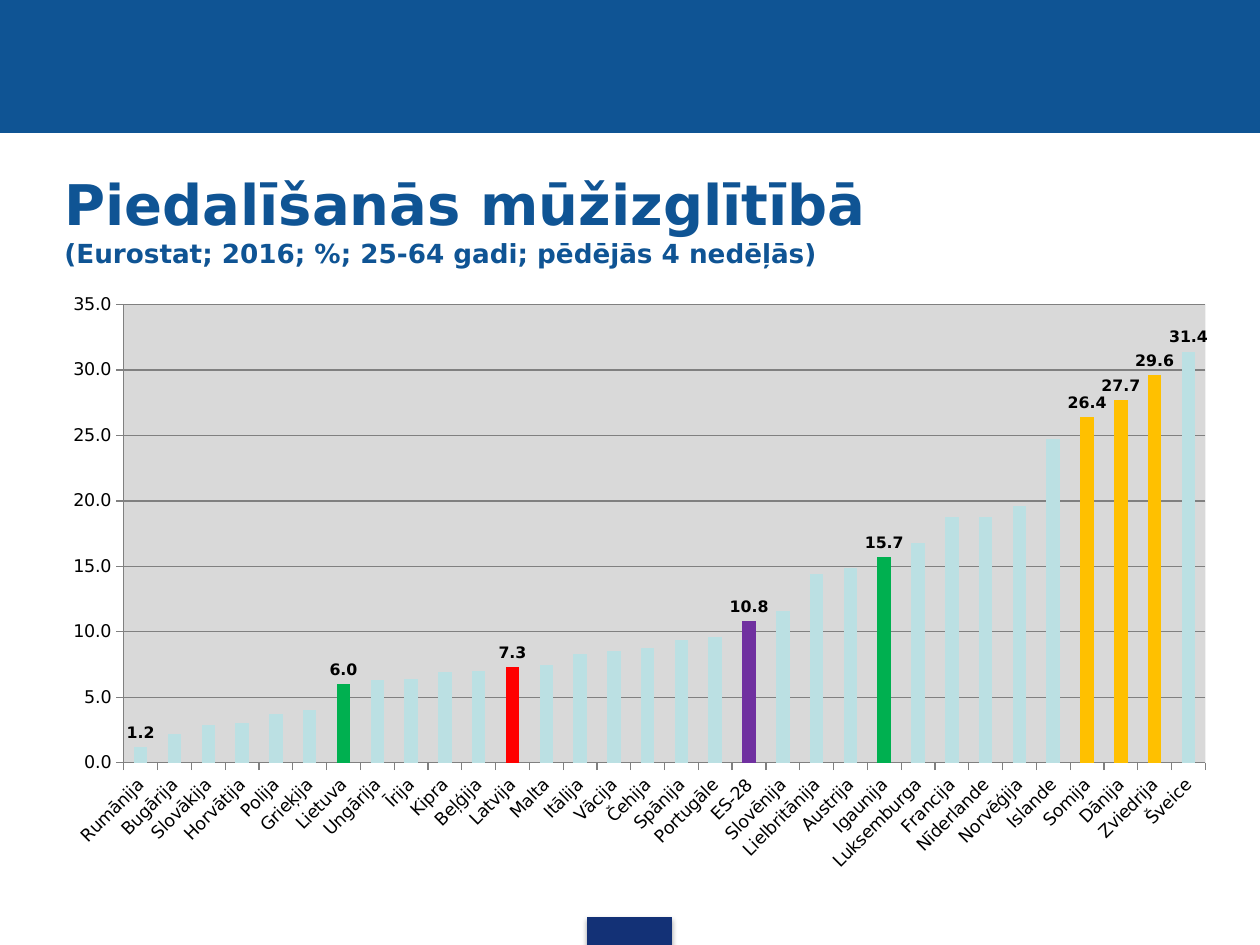
from lxml import etree
from pptx import Presentation
from pptx import util as u
from pptx.chart import data as cd
from pptx.dml import color
from pptx.enum import chart as ce
from pptx.enum import shapes, text
from pptx.oxml import ns, parse_xml

BLUE = color.RGBColor(0x0F, 0x54, 0x94)
NAVY = color.RGBColor(0x13, 0x31, 0x76)
BLACK = color.RGBColor(0, 0, 0)
GRID = color.RGBColor(0x80, 0x80, 0x80)
PALE = color.RGBColor(0xBB, 0xE0, 0xE3)
GREEN = color.RGBColor(0x00, 0xB0, 0x50)
RED = color.RGBColor(0xFF, 0, 0)
PURPLE = color.RGBColor(0x70, 0x30, 0xA0)
AMBER = color.RGBColor(0xFF, 0xC0, 0)
FONT = "DejaVu Sans"

RATES = {
    "Rumānija": 1.2, "Bugārija": 2.2, "Slovākija": 2.9, "Horvātija": 3,
    "Polija": 3.7, "Grieķija": 4, "Lietuva": 6, "Ungārija": 6.3,
    "Īrija": 6.4, "Kipra": 6.9, "Beļģija": 7, "Latvija": 7.3,
    "Malta": 7.5, "Itālija": 8.3, "Vācija": 8.5, "Čehija": 8.8,
    "Spānija": 9.4, "Portugāle": 9.6, "ES-28": 10.8, "Slovēnija": 11.6,
    "Lielbritānija": 14.4, "Austrija": 14.9, "Igaunija": 15.7,
    "Luksemburga": 16.8, "Francija": 18.8, "Nīderlande": 18.8,
    "Norvēģija": 19.6, "Islande": 24.7, "Somija": 26.4, "Dānija": 27.7,
    "Zviedrija": 29.6, "Šveice": 31.4,
}
HIGHLIGHTS = {
    "Rumānija": PALE, "Lietuva": GREEN, "Latvija": RED, "ES-28": PURPLE,
    "Igaunija": GREEN, "Somija": AMBER, "Dānija": AMBER,
    "Zviedrija": AMBER, "Šveice": PALE,
}


class SlideBuilder:
    def __init__(self, slide, font=FONT):
        self.s = slide
        self.font = font

    def style(self, f, size, rgb, bold=False):
        f.name, f.size, f.bold = self.font, u.Pt(size), bold
        f.color.rgb = rgb

    def box(self, left, top, width, height, rgb, shadow=False):
        sp = self.s.shapes.add_shape(
            shapes.MSO_SHAPE.RECTANGLE, *map(u.Cm, (left, top, width, height)))
        sp.shadow.inherit = False
        sp.fill.solid()
        sp.fill.fore_color.rgb = rgb
        sp.line.color.rgb = rgb
        sp.line.width = u.Pt(0.75)
        if shadow:
            effects = sp._element.spPr.find(ns.qn("a:effectLst"))
            effects.append(parse_xml(
                f'<a:outerShdw {ns.nsdecls("a")} blurRad="{u.Pt(3.1)}" '
                f'dist="{u.Pt(1.8)}" dir="5400000" rotWithShape="0">'
                '<a:srgbClr val="000000"><a:alpha val="35000"/></a:srgbClr>'
                '</a:outerShdw>'))

    def title(self, left, top, width, height, heading, note):
        sp = self.s.shapes.add_textbox(*map(u.Cm, (left, top, width, height)))
        tf = sp.text_frame
        tf.word_wrap = True
        tf.vertical_anchor = text.MSO_ANCHOR.MIDDLE
        p = tf.paragraphs[0]
        p.text = f"{heading}\v{note}"
        p._p.get_or_add_pPr().set("marL", str(u.Cm(1)))
        for r, size in zip(p.runs, (32, 15)):
            self.style(r.font, size, BLUE, True)

    def column_chart(self, left, top, width, height, rates, highlights):
        data = cd.CategoryChartData(number_format="#,##0.0")
        data.categories = list(rates)
        data.add_series("Series 1", list(rates.values()))
        chart = self.s.shapes.add_chart(
            ce.XL_CHART_TYPE.COLUMN_CLUSTERED,
            *map(u.Cm, (left, top, width, height)), data).chart
        chart.has_legend = False
        chart.has_title = False
        self.style(chart.font, 10, BLACK)
        self.axes(chart)
        plot = chart.plots[0]
        plot.gap_width = 150
        plot.vary_by_categories = False
        series = plot.series[0]
        series.format.fill.solid()
        series.format.fill.fore_color.rgb = PALE
        series.data_labels.show_value = False
        names = list(rates)
        for name, rgb in highlights.items():
            point = series.points[names.index(name)]
            point.format.fill.solid()
            point.format.fill.fore_color.rgb = rgb
            self.style(point.data_label.font, 9, BLACK, True)
            point.data_label.position = ce.XL_LABEL_POSITION.OUTSIDE_END
        self.plot_area(chart, x=0.068, y=0.018, w=0.924, h=0.758)

    def axes(self, chart):
        for axis in (chart.category_axis, chart.value_axis):
            axis.major_tick_mark = ce.XL_TICK_MARK.OUTSIDE
            axis.minor_tick_mark = ce.XL_TICK_MARK.NONE
            axis.format.line.color.rgb = GRID
            axis.format.line.width = u.Pt(0.75)
            self.style(axis.tick_labels.font, 10, BLACK)
        body = chart.category_axis._element.find(".//" + ns.qn("a:bodyPr"))
        body.set("rot", "-2700000")
        body.set("vert", "horz")
        axis = chart.value_axis
        axis.minimum_scale, axis.maximum_scale, axis.major_unit = 0, 35, 5
        axis.tick_labels.number_format = "#,##0.0"
        axis.tick_labels.number_format_is_linked = False
        axis.has_major_gridlines = True
        axis.major_gridlines.format.line.color.rgb = GRID
        axis.major_gridlines.format.line.width = u.Pt(0.75)

    def plot_area(self, chart, **frame):
        area = chart._chartSpace.chart.plotArea
        for old in area.findall(ns.qn("c:layout")):
            area.remove(old)
        layout = etree.Element(ns.qn("c:layout"))
        manual = etree.SubElement(layout, ns.qn("c:manualLayout"))
        settings = {"layoutTarget": "inner", "xMode": "edge", "yMode": "edge"}
        for tag, value in {**settings, **frame}.items():
            etree.SubElement(manual, ns.qn(f"c:{tag}")).set("val", str(value))
        area.insert(0, layout)
        area.append(parse_xml(
            f'<c:spPr {ns.nsdecls("c", "a")}><a:solidFill>'
            '<a:srgbClr val="D9D9D9"/></a:solidFill>'
            '<a:ln><a:noFill/></a:ln></c:spPr>'))


def main():
    prs = Presentation()
    prs.slide_width, prs.slide_height = u.Cm(25.4), u.Cm(19.05)
    s = SlideBuilder(prs.slides.add_slide(prs.slide_layouts[6]))
    s.box(0, 0, 25.4, 2.67, BLUE)
    s.box(11.84, 18.49, 1.7, 0.56, NAVY, shadow=True)
    s.title(0.05, 3.12, 22.86, 2.59, "Piedalīšanās mūžizglītībā ",
            "(Eurostat; 2016; %; 25-64 gadi; pēdējās 4 nedēļās)")
    s.column_chart(0.89, 5.92, 23.6, 12.19, RATES, HIGHLIGHTS)
    prs.save("out.pptx")


if __name__ == "__main__":
    main()
